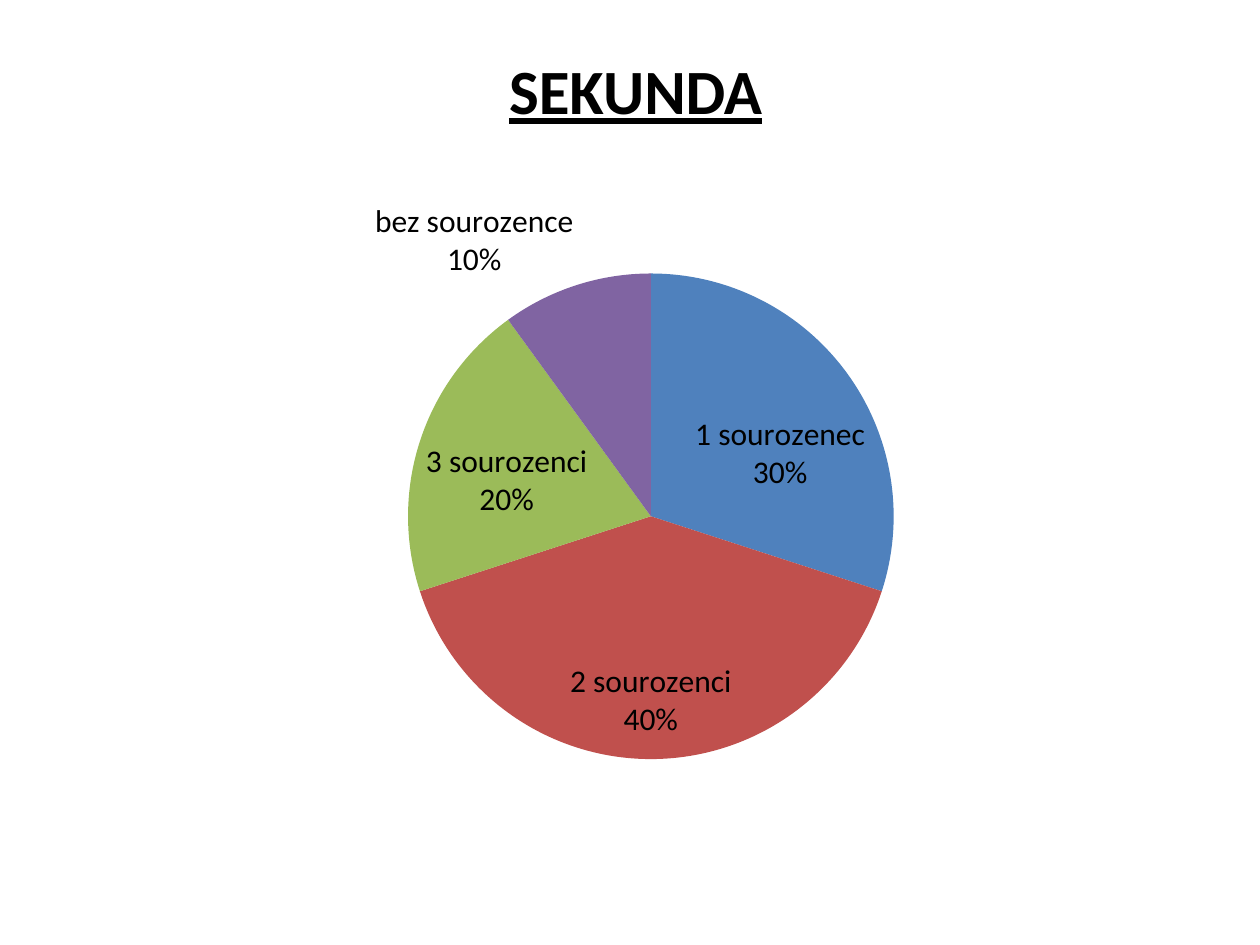
from dataclasses import dataclass

from pptx import Presentation, util as u
from pptx.chart.data import CategoryChartData
from pptx.dml.color import RGBColor
from pptx.enum import chart as ch, text
from pptx.oxml import parse_xml
from pptx.oxml.ns import nsdecls, qn

HEADING = "SEKUNDA"
SIBLINGS = [
    ("1 sourozenec", 30, "4F81BD"),
    ("2 sourozenci", 40, "C0504D"),
    ("3 sourozenci", 20, "9BBB59"),
    ("bez sourozence", 10, "8064A2"),
]


@dataclass(frozen=True)
class Theme:
    font: str = "Calibri"
    ink: str = "000000"
    heading: int = 36
    label: int = 18


THEME = Theme()
HEADING_BOX = (0.28, 0.36, 9.53, 0.71)
CHART_BOX = (0.91, 1.15, 8.03, 5.67)
PIE_SHARE = {"x": 0.29, "y": 0.18, "w": 0.48, "h": 0.68}


def style_font(font, size):
    font.name = THEME.font
    font.size = u.Pt(size)
    font.color.rgb = RGBColor.from_string(THEME.ink)


def add_heading(slide):
    heading = slide.shapes.title
    heading.left, heading.top, heading.width, heading.height = map(u.Inches, HEADING_BOX)
    frame = heading.text_frame
    frame.text = HEADING
    frame.vertical_anchor = text.MSO_ANCHOR.TOP
    frame.auto_size = text.MSO_AUTO_SIZE.SHAPE_TO_FIT_TEXT
    line = frame.paragraphs[0]
    line.alignment = text.PP_ALIGN.CENTER
    font = line.runs[0].font
    style_font(font, THEME.heading)
    font.bold = font.underline = True


def place_pie(chart):
    """Fix the pie's area as shares of the chart's size."""
    plot_area = chart._chartSpace.chart.plotArea
    for old in plot_area.findall(qn("c:layout")):
        plot_area.remove(old)
    modes = '<c:xMode val="edge"/><c:yMode val="edge"/>'
    shares = "".join(f'<c:{side} val="{share}"/>' for side, share in PIE_SHARE.items())
    plot_area.insert(0, parse_xml(
        f'<c:layout {nsdecls("c")}><c:manualLayout><c:layoutTarget val="inner"/>'
        f"{modes}{shares}</c:manualLayout></c:layout>"))


def add_sibling_chart(slide):
    names, shares, colours = zip(*SIBLINGS)
    data = CategoryChartData()
    data.categories = names
    data.add_series("Series 1", shares)
    chart = slide.shapes.add_chart(
        ch.XL_CHART_TYPE.PIE, *map(u.Inches, CHART_BOX), data).chart
    chart.has_title = chart.has_legend = False
    style_font(chart.font, THEME.label)

    plot = chart.plots[0]
    plot.vary_by_categories = True
    for index, colour in enumerate(colours):
        fill = plot.series[0].points[index].format.fill
        fill.solid()
        fill.fore_color.rgb = RGBColor.from_string(colour)

    plot.has_data_labels = True
    labels = plot.data_labels
    labels.show_category_name = labels.show_percentage = True
    labels.show_value = False
    labels.number_format, labels.number_format_is_linked = "0%", False
    labels.position = ch.XL_LABEL_POSITION.BEST_FIT
    style_font(labels.font, THEME.label)
    place_pie(chart)


def main():
    deck = Presentation()
    deck.slide_width, deck.slide_height = u.Inches(10), u.Inches(7.5)
    slide = deck.slides.add_slide(deck.slide_layouts[5])
    add_sibling_chart(slide)
    add_heading(slide)
    deck.save("out.pptx")


if __name__ == "__main__":
    main()
